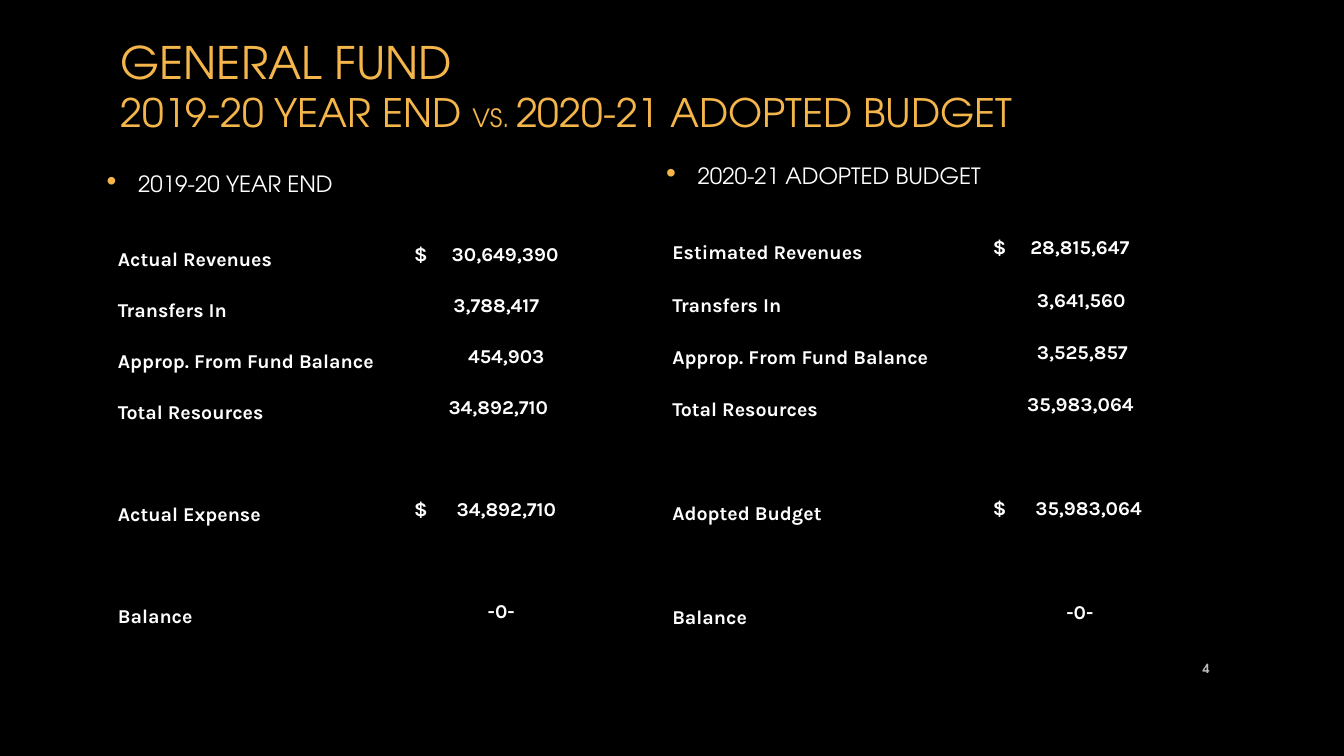
"""Build the General Fund slide: year end beside adopted budget."""
from lxml import etree
from pptx import Presentation
from pptx.dml.color import RGBColor
from pptx.enum.text import MSO_ANCHOR, PP_ALIGN
from pptx.oxml.ns import qn
from pptx.util import Pt

TOP, MID, LOW = MSO_ANCHOR.TOP, MSO_ANCHOR.MIDDLE, MSO_ANCHOR.BOTTOM
LEFT, RIGHT = PP_ALIGN.LEFT, PP_ALIGN.RIGHT
HEAD, BODY = "TeX Gyre Adventor", "Karla"
GOLD, WHITE, GREY, BLACK = "F4B54B", "FFFFFF", "BFBFBF", "000000"
PLAIN = "{2D5ABB26-0587-4C30-8999-92F81FD0307C}"

TITLE = [
    [("GENERAL FUND", 32)],
    [("2019-20 YEAR END ", 28), ("VS. ", 18), ("2020-21 ADOPTED BUDGET", 28)],
]
PAGE = "4"
PANELS = [
    {
        "head": "2019-20 year end",
        "spot": (69.1, 113.8),
        "grid": (79.2, 157.7),
        "cols": (209.5, 140.4),
        "row": 36.45,
        "rows": [
            ("Actual Revenues", "$\t30,649,390", 26.8),
            ("Transfers In", "3,788,417", 28),
            ("Approp. From Fund Balance", "454,903", 38.5),
            ("Total Resources", "34,892,710", 24.5),
            None,
            ("Actual Expense", "$\t34,892,710", 30.3),
            None,
            ("Balance", "-0-", 52.5),
        ],
    },
    {
        "head": "2020-21 adopted budget",
        "spot": (468.7, 108),
        "grid": (475.2, 151.9),
        "cols": (226.8, 151.9),
        "row": 37.26,
        "rows": [
            ("Estimated Revenues", "$\t28,815,647", 26.8),
            ("Transfers In", "3,641,560", 31.5),
            ("Approp. From Fund Balance", "3,525,857", 31.5),
            ("Total Resources", "35,983,064", 24.5),
            None,
            ("Adopted Budget", "$\t35,983,064", 30.3),
            None,
            ("Balance", "-0-", 52.5),
        ],
    },
]


def color(code):
    return RGBColor.from_string(code)


def write(frame, lines, size=14, font=BODY, ink=WHITE, bold=False,
          align=LEFT, lead=None, left=0, hang=0):
    """Fill the first paragraph; lines hold (text, size) runs."""
    if isinstance(lines, str):
        lines = [[(lines, size)]]
    para = frame.paragraphs[0]
    para.alignment = align
    if lead:
        para.line_spacing = Pt(lead)
    for i, line in enumerate(lines):
        if i:
            para.add_line_break()
        for text, pts in line:
            run = para.add_run()
            run.text = text
            run.font.size = Pt(pts)
            run.font.name = font
            run.font.bold = bold
            run.font.color.rgb = color(ink)
    props = para._p.get_or_add_pPr()
    props.set("marL", str(Pt(left)))
    props.set("indent", str(Pt(-hang)))
    return para


def add_box(slide, spot, size, anchor=TOP):
    box = slide.shapes.add_textbox(*map(Pt, spot + size))
    box.text_frame.word_wrap = True
    box.text_frame.vertical_anchor = anchor
    return box.text_frame


def add_head(slide, text, spot):
    frame = add_box(slide, spot, (383.8, 246.2))
    para = write(frame, text, size=20, font=HEAD, left=22.5, hang=22.5)
    para.space_after = Pt(6)
    para.runs[0].font._element.set("cap", "small")
    props = para._p.get_or_add_pPr()
    before = etree.Element(qn("a:spcBef"))
    etree.SubElement(before, qn("a:spcPct")).set("val", "20000")
    props.insert(0, before)
    tint = etree.SubElement(props, qn("a:buClr"))
    etree.SubElement(tint, qn("a:srgbClr")).set("val", GOLD)
    etree.SubElement(props, qn("a:buFont")).set("typeface", "Arial")
    etree.SubElement(props, qn("a:buChar")).set("char", "•")


def add_grid(slide, panel):
    rows, cols, high = panel["rows"], panel["cols"], panel["row"]
    size = (sum(cols), high * len(rows))
    shape = slide.shapes.add_table(len(rows), len(cols),
                                   *map(Pt, panel["grid"] + size))
    table = shape.table
    table.first_row = table.horz_banding = False
    table._tbl.tblPr.find(qn("a:tableStyleId")).text = PLAIN
    for col, wide in zip(table.columns, cols):
        col.width = Pt(wide)
    for row, data in zip(table.rows, rows):
        row.height = Pt(high)
        for cell in row.cells:
            cell.fill.background()
            cell.vertical_anchor = LOW
        if not data:
            continue
        name, value, left = data
        label, sum_cell = row.cells
        label.margin_left = label.margin_right = Pt(5)
        label.margin_top = label.margin_bottom = Pt(0)
        write(label.text_frame, name, bold=True, lead=12)
        hang = left if "\t" in value else 0
        write(sum_cell.text_frame, value, bold=True, lead=12,
              left=left, hang=hang)


def main():
    deck = Presentation()
    deck.slide_width, deck.slide_height = Pt(960), Pt(540)
    slide = deck.slides.add_slide(deck.slide_layouts[6])
    slide.background.fill.solid()
    slide.background.fill.fore_color.rgb = color(BLACK)
    title = add_box(slide, (79.2, 7.2), (779.8, 107.3), MID)
    write(title, TITLE, font=HEAD, ink=GOLD)
    for panel in PANELS:
        add_head(slide, panel["head"], panel["spot"])
        add_grid(slide, panel)
    page = add_box(slide, (828, 463), (43.2, 28.8), MID)
    write(page, PAGE, size=9, font=HEAD, ink=GREY, bold=True, align=RIGHT)
    deck.save("out.pptx")


if __name__ == "__main__":
    main()
